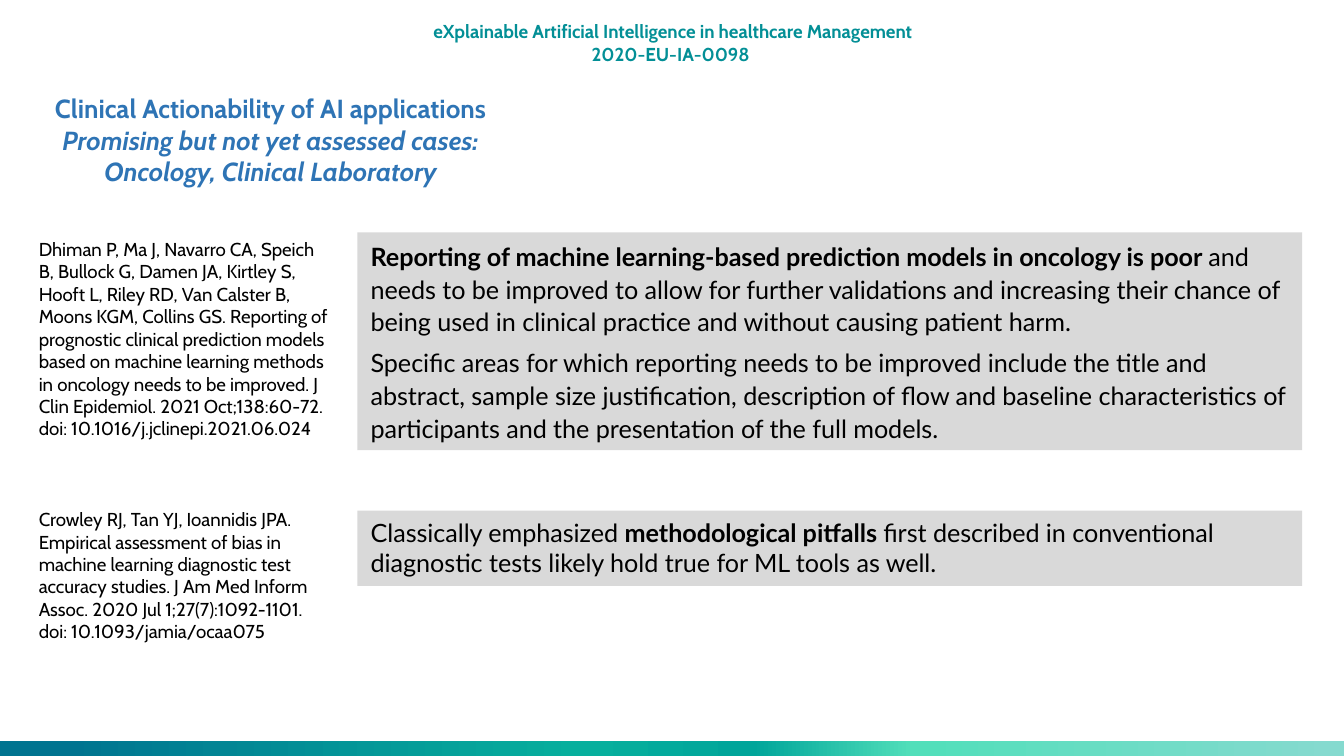
from dataclasses import dataclass

from lxml.etree import SubElement
from pptx import Presentation
from pptx.dml.color import RGBColor as Color
from pptx.enum.shapes import MSO_SHAPE as Shape
from pptx.enum.text import MSO_ANCHOR as Anchor, MSO_AUTO_SIZE as AutoSize, PP_ALIGN as Align
from pptx.oxml.ns import qn
from pptx.util import Inches, Pt


@dataclass(frozen=True)
class Theme:
    heading_font: str = "Cabin"
    body_font: str = "Lato"
    teal: str = "038F96"
    blue: str = "2E74B5"
    ink: str = "000000"
    panel: str = "D9D9D9"
    bar_stops: tuple = ((5, "007490"), (43, "06AF9D"), (56, "00A59A"),
                        (68, "51DFBA"), (99, "85DACF"))
    small: float = 10
    body: float = 13.5
    title: float = 14


THEME = Theme()
WIDTH = 10
HEIGHT = WIDTH * 9 / 16
BAR_HEIGHT = 0.11

# Columns as (left, width)
CITATION_COLUMN = (0.19, 2.35)
FINDING_COLUMN = (2.66, 7.03)

# Text formats
HEADER = {"name": THEME.heading_font, "size": Pt(THEME.small), "color": THEME.teal, "bold": True}
TITLE = {"name": THEME.heading_font, "size": Pt(THEME.title), "color": THEME.blue, "bold": True}
CITATION = {"name": THEME.heading_font, "size": Pt(THEME.small), "color": THEME.ink}
FINDING = {"name": THEME.body_font, "size": Pt(THEME.body), "color": THEME.ink, "bold": False}
BOLD, ITALIC = {"bold": True}, {"italic": True}

# Each study: citation (top, height, text), finding (top, height, paragraphs, spacing)
STUDIES = [
    ((1.72, 1.62,
      "Dhiman P, Ma J, Navarro CA, Speich B, Bullock G, Damen JA, Kirtley S, Hooft L, "
      "Riley RD, Van Calster B, Moons KGM, Collins GS. Reporting of prognostic clinical "
      "prediction models based on machine learning methods in oncology needs to be improved. "
      "J Clin Epidemiol. 2021 Oct;138:60-72. doi: 10.1016/j.jclinepi.2021.06.024"),
     (1.73, 1.62,
      [[("Reporting of machine learning-based prediction models in oncology is poor ", BOLD),
        ("and needs to be improved to allow for further validations and increasing their "
         "chance of being used in clinical practice and without causing patient harm.", {})],
       [("Specific areas for which reporting needs to be improved include the title and "
         "abstract, sample size justification, description of flow and baseline "
         "characteristics of participants and the presentation of the full models.", {})]],
      {"line_spacing": 1.08, "space_after": Pt(4.5)})),
    ((3.73, 1.11,
      "Crowley RJ, Tan YJ, Ioannidis JPA. Empirical assessment of bias in machine learning "
      "diagnostic test accuracy studies. J Am Med Inform Assoc. 2020 Jul 1;27(7):1092-1101. "
      "doi: 10.1093/jamia/ocaa075"),
     (3.8, 0.56,
      [[("Classically emphasized ", {}), ("methodological pitfalls ", BOLD),
        ("first described in conventional diagnostic tests likely hold true for ML tools "
         "as well.", {})]],
      {})),
]


def set_all(target, values):
    for name, value in values.items():
        setattr(target, name, value)


def write(box, paragraphs, font, align=Align.LEFT, anchor=Anchor.TOP, spacing=None):
    """Fill a box with paragraphs, each a list of (text, format changes)."""
    frame = box.text_frame
    set_all(frame, {"word_wrap": True, "auto_size": AutoSize.SHAPE_TO_FIT_TEXT,
                    "vertical_anchor": anchor})
    for index, spans in enumerate(paragraphs):
        para = frame.add_paragraph() if index else frame.paragraphs[0]
        set_all(para, {"alignment": align, **(spacing or {})})
        for text, changes in spans:
            span = para.add_run()
            span.text = text
            values = {**font, **changes}
            span.font.color.rgb = Color.from_string(values.pop("color"))
            set_all(span.font, values)


def add_text(page, place, paragraphs, font, **layout):
    box = page.shapes.add_textbox(*map(Inches, place))
    write(box, paragraphs, font, **layout)


def add_rectangle(page, place):
    box = page.shapes.add_shape(Shape.RECTANGLE, *map(Inches, place))
    box.shadow.inherit = False
    box.line.fill.background()
    return box


def add_panel(page, place, paragraphs, spacing):
    box = add_rectangle(page, place)
    box.fill.solid()
    box.fill.fore_color.rgb = Color.from_string(THEME.panel)
    write(box, paragraphs, FINDING, spacing=spacing)


def add_gradient_bar(page, place):
    bar = add_rectangle(page, place)
    bar.fill.gradient()
    bar.fill.gradient_angle = 0
    stops = bar.element.spPr.find(qn("a:gradFill")).find(qn("a:gsLst"))
    for stop in list(stops):
        stops.remove(stop)
    for percent, color in THEME.bar_stops:
        stop = SubElement(stops, qn("a:gs"), pos=str(percent * 1000))
        SubElement(stop, qn("a:srgbClr"), val=color)


def set_title(page):
    title = page.shapes.title
    set_all(title, dict(zip(("left", "top", "width", "height"),
                            map(Inches, (0.28, 0.65, 3.47, 0.78)))))
    set_all(title.text_frame, {"margin_left": Inches(0.07), "margin_right": Inches(0.07),
                               "margin_top": Inches(0.04), "margin_bottom": Inches(0.04)})
    write(title,
          [[("Clinical Actionability of AI applications ", {}),
            ("Promising but not yet assessed cases:", ITALIC)],
           [("Oncology, Clinical Laboratory", ITALIC)]],
          TITLE, align=Align.CENTER, anchor=Anchor.MIDDLE)


def main():
    deck = Presentation()
    deck.slide_width, deck.slide_height = Inches(WIDTH), Inches(HEIGHT)
    page = deck.slides.add_slide(deck.slide_layouts[5])

    # Project header and footer bar
    add_text(page, (3.1, 0.1, 3.81, 0.44),
             [[("eXplainable Artificial Intelligence in healthcare Management "
                "2020-EU-IA-0098 ", {})]],
             HEADER, align=Align.CENTER)
    add_gradient_bar(page, (0, HEIGHT - BAR_HEIGHT, WIDTH, BAR_HEIGHT))

    # Title
    set_title(page)

    # One row per study: finding beside its citation
    for (cite_top, cite_height, citation), (top, height, finding, spacing) in STUDIES:
        left, width = FINDING_COLUMN
        add_panel(page, (left, top, width, height), finding, spacing)
        left, width = CITATION_COLUMN
        add_text(page, (left, cite_top, width, cite_height), [[(citation, {})]], CITATION)

    deck.save("out.pptx")


if __name__ == "__main__":
    main()
